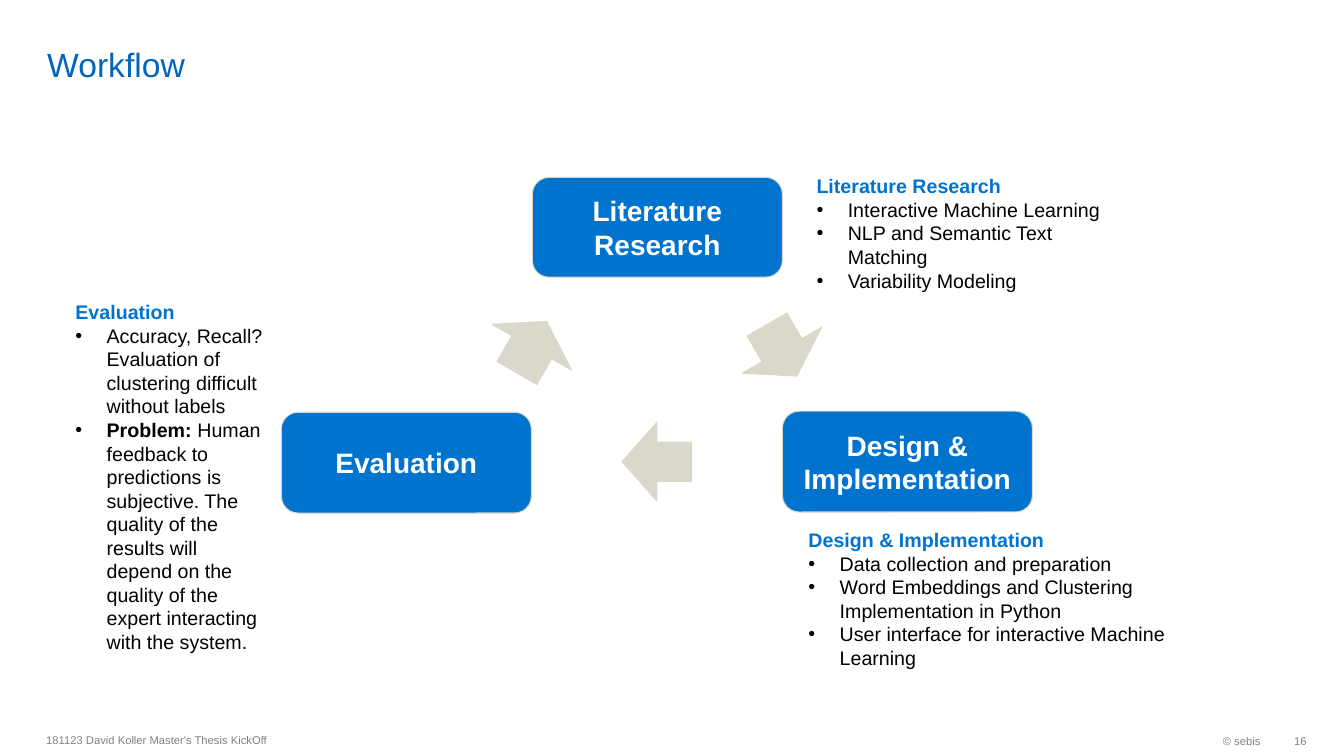
from lxml import etree
from pptx import Presentation
from pptx import util as u
from pptx.dml.color import RGBColor
from pptx.enum import shapes, text
from pptx.oxml import ns

TITLE_BLUE = RGBColor(0x00, 0x65, 0xBD)
BLUE = RGBColor(0x00, 0x73, 0xCF)
SAND = RGBColor(0xDA, 0xD7, 0xCB)
GREY = RGBColor(0x80, 0x80, 0x80)
BLACK = RGBColor(0, 0, 0)
WHITE = RGBColor(0xFF, 0xFF, 0xFF)

LEFT, CENTER, RIGHT = text.PP_ALIGN.LEFT, text.PP_ALIGN.CENTER, text.PP_ALIGN.RIGHT
MIDDLE, BOTTOM = text.MSO_ANCHOR.MIDDLE, text.MSO_ANCHOR.BOTTOM


class WorkflowSlide:
    font_name = "Arial"
    bullet_indent = u.Inches(0.31)

    def __init__(self, deck):
        self.slide = deck.slides.add_slide(deck.slide_layouts[6])

    def style(self, paragraph, size, color, bold=False, align=LEFT):
        paragraph.alignment = align
        for run in paragraph.runs:
            run.font.name = self.font_name
            run.font.size = u.Pt(size)
            run.font.bold = bold
            run.font.color.rgb = color

    def textbox(self, box):
        frame = self.slide.shapes.add_textbox(*map(u.Inches, box)).text_frame
        frame.word_wrap = True
        return frame

    def label(self, box, wording, size, color, align=LEFT, anchor=MIDDLE):
        frame = self.textbox(box)
        frame.vertical_anchor = anchor
        frame.text = wording
        self.style(frame.paragraphs[0], size, color, align=align)
        return frame

    def shape(self, kind, box, fill):
        block = self.slide.shapes.add_shape(kind, *map(u.Inches, box))
        block.shadow.inherit = False
        block.fill.solid()
        block.fill.fore_color.rgb = fill
        block.line.color.rgb = SAND
        block.line.width = u.Pt(0.75)
        return block

    def step(self, box, name):
        frame = self.shape(shapes.MSO_SHAPE.ROUNDED_RECTANGLE, box, BLUE).text_frame
        frame.word_wrap = True
        frame.vertical_anchor = MIDDLE
        frame.text = name
        self.style(frame.paragraphs[0], 20, WHITE, True, CENTER)

    def arrow(self, box, rotation):
        self.shape(shapes.MSO_SHAPE.RIGHT_ARROW, box, SAND).rotation = rotation

    def details(self, box, heading, points):
        """Each point is a (bold lead-in, remaining text) pair."""
        frame = self.textbox(box)
        frame.auto_size = text.MSO_AUTO_SIZE.SHAPE_TO_FIT_TEXT
        frame.text = heading
        self.style(frame.paragraphs[0], 14, BLUE, True)
        for lead, rest in points:
            point = frame.add_paragraph()
            point.text = lead + rest if not lead else lead
            self.bullet(point)
            self.style(point, 14, BLACK, bool(lead))
            if lead:
                follow = point.add_run()
                follow.text = rest
                self.style(point, 14, BLACK)
                point.runs[0].font.bold = True

    def bullet(self, paragraph):
        props = paragraph._p.get_or_add_pPr()
        props.set("marL", str(self.bullet_indent))
        props.set("indent", str(-self.bullet_indent))
        etree.SubElement(props, ns.qn("a:buFont")).set("typeface", self.font_name)
        etree.SubElement(props, ns.qn("a:buChar")).set("char", "•")


def main():
    deck = Presentation()
    deck.slide_width, deck.slide_height = u.Inches(13.33), u.Inches(7.5)
    page = WorkflowSlide(deck)

    # Title and footer
    title = page.label((0.37, 0.05, 11.58, 0.79), "Workflow", 24, TITLE_BLUE, anchor=BOTTOM)
    title.margin_top = title.margin_bottom = 0
    page.label((10.26, 7.19, 2.34, 0.32), "© sebis", 8, GREY, RIGHT)
    page.label((0.36, 7.18, 6.3, 0.32), "181123 David Koller Master's Thesis KickOff", 8, GREY)
    number = page.label((12.6, 7.19, 0.36, 0.32), "16", 8, GREY, RIGHT)
    number.margin_right = 0

    # Cycle of steps
    page.step((5.28, 1.76, 2.48, 0.99), "Literature Research")
    page.step((2.79, 4.09, 2.48, 1), "Evaluation")
    page.step((7.76, 4.08, 2.48, 1), "Design & Implementation")

    # Arrows between the steps
    page.arrow((6.17, 4.19, 0.69, 0.78), 180)
    page.arrow((4.98, 2.99, 0.59, 0.91), 300)
    page.arrow((7.46, 3.02, 0.59, 0.91), 60)

    # Details beside each step
    page.details((0.65, 2.93, 2.1, 3.64), "Evaluation", [
        ("", "Accuracy, Recall? Evaluation of clustering difficult without labels"),
        ("Problem:", " Human feedback to predictions is subjective. The quality of the "
                     "results will depend on the quality of the expert interacting "
                     "with the system."),
    ])
    page.details((8, 1.68, 3.22, 1.28), "Literature Research", [
        ("", "Interactive Machine Learning"),
        ("", "NLP and Semantic Text Matching"),
        ("", "Variability Modeling"),
    ])
    page.details((7.92, 5.19, 4.02, 1.51), "Design & Implementation", [
        ("", "Data collection and preparation"),
        ("", "Word Embeddings and Clustering Implementation in Python"),
        ("", "User interface for interactive Machine Learning"),
    ])

    deck.save("out.pptx")


if __name__ == "__main__":
    main()
